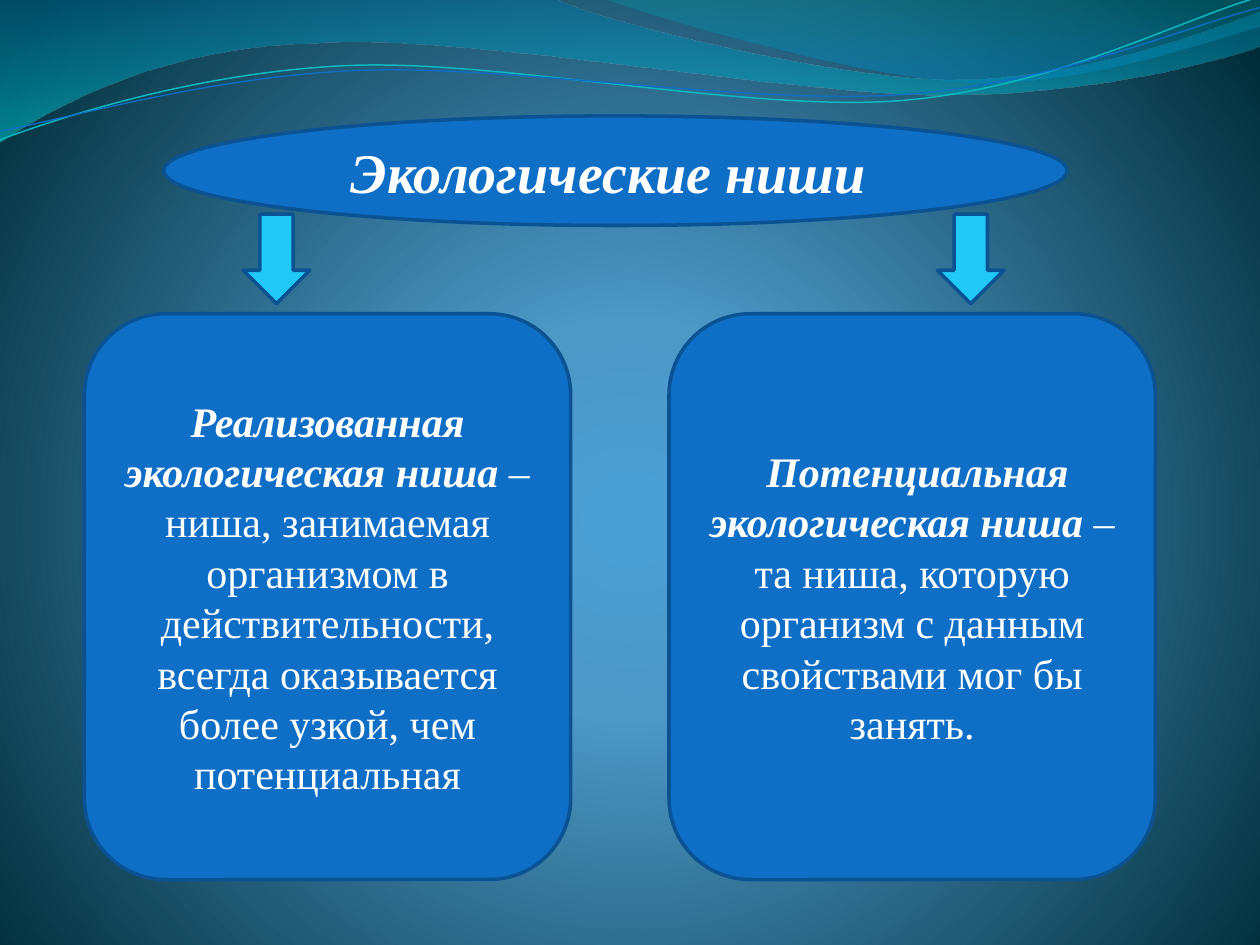
from math import cos, radians, sin

from lxml.etree import SubElement
from pptx import Presentation
from pptx.dml.color import RGBColor
from pptx.enum.shapes import MSO_SHAPE
from pptx.enum.text import MSO_ANCHOR, PP_ALIGN
from pptx.oxml.ns import qn
from pptx.util import Inches, Pt

BLUE = RGBColor(0x0F, 0x6F, 0xC6)
DARK_BLUE = RGBColor(0x0B, 0x52, 0x92)
CYAN = RGBColor(0x20, 0xC9, 0xF8)
TEAL = RGBColor(0x0A, 0xB8, 0xBF)
WHITE = RGBColor(0xFF, 0xFF, 0xFF)

WIDTH, HEIGHT = 10, 7.5
FONT = "Times New Roman"

TITLE = [("Экологические ниши ", True, True)]
NICHES = [
    [("Реализованная экологическая ниша ", True, True),
     ("– ниша, занимаемая организмом в действительности, всегда оказывается "
      "более узкой, чем потенциальная", False, False)],
    [(" ", True, False),
     ("Потенциальная экологическая ниша ", True, True),
     ("– та ниша, которую организм с данным свойствами мог бы занять.", False, False)],
]

BACKGROUND_STOPS = [(0, "4AA0D6", 100), (25, "4C98C7", 100), (100, "002C38", 100)]
BACKGROUND_FOCUS = {"l": 10, "t": 110, "r": 10, "b": 100}

WAVES = [
    ([(0, 0), (4.4, -0.01),
      (4.76, 0.17, 6.64, 0.63, 7.58, 0.63), (8.53, 0.63, 9.58, 0.26, 10, 0.09),
      (10.01, 0.36),
      (9.83, 0.44, 8.7, 0.76, 7.46, 0.75), (6.22, 0.75, 3.82, 0.28, 2.57, 0.34),
      (1.29, 0.36, 0.46, 0.83, -0.01, 1.13), (0, 0)],
     [(0, "0074A1", 45), (100, "00C6CF", 55)]),
    ([(4.79, -0.01),
      (5.09, 0.11, 6.82, 0.62, 7.69, 0.65), (8.56, 0.69, 9.61, 0.32, 10, 0.21),
      (10, 0), (4.79, -0.01)],
     [(0, "00A1A9", 30), (80, "008BBF", 45)]),
]
STRAND_TILT = 2.7
STRANDS = [
    ([(0, 1.11), (0.48, 0.93, 1.58, 0.57, 2.77, 0.52),
      (3.95, 0.47, 5.93, 0.89, 7.13, 0.8), (8.33, 0.71, 9.38, 0.15, 9.98, -0.02)],
     (4.99, 0.57), TEAL, 0.85),
    ([(0, 1.04), (0.47, 0.96, 1.64, 0.61, 2.83, 0.56),
      (4.03, 0.51, 5.97, 0.84, 7.17, 0.75), (8.36, 0.67, 9.41, 0.21, 10, 0.06)],
     (5, 0.59), BLUE, 0.75),
]

CARD_LEFT, CARD_TOP, CARD_WIDTH, CARD_HEIGHT, CARD_PITCH = 0.67, 2.49, 3.86, 4.49, 4.64
ARROW_LEFT, ARROW_TOP, ARROW_WIDTH, ARROW_HEIGHT, ARROW_PITCH = 1.93, 1.7, 0.53, 0.71, 5.51


def set_gradient(fill, element, stops, focus=None):
    fill.gradient()
    gradient = element.find(".//" + qn("a:gradFill"))
    for child in list(gradient):
        gradient.remove(child)
    stop_list = SubElement(gradient, qn("a:gsLst"))
    for position, color, opacity in stops:
        stop = SubElement(stop_list, qn("a:gs"), pos=str(position * 1000))
        color_element = SubElement(stop, qn("a:srgbClr"), val=color)
        if opacity < 100:
            SubElement(color_element, qn("a:alpha"), val=str(opacity * 1000))
    if focus:
        circle = SubElement(gradient, qn("a:path"), path="circle")
        SubElement(circle, qn("a:fillToRect"),
                   {side: str(share * 1000) for side, share in focus.items()})
    else:
        SubElement(gradient, qn("a:lin"), ang="5400000", scaled="1")


def point_pairs(segment):
    return list(zip(segment[::2], segment[1::2]))


def turn(segment, center, degrees):
    cosine, sine = cos(radians(degrees)), sin(radians(degrees))
    turned = []
    for x, y in point_pairs(segment):
        dx, dy = x - center[0], y - center[1]
        turned += [center[0] + dx * cosine - dy * sine, center[1] + dx * sine + dy * cosine]
    return turned


def add_outline(slide, segments, close):
    anchors = [(Inches(segment[-2]), Inches(segment[-1])) for segment in segments]
    builder = slide.shapes.build_freeform(*anchors[0], scale=1.0)
    builder.add_line_segments(anchors[1:], close=close)
    shape = builder.convert_to_shape()
    shape.shadow.inherit = False
    left, top = (min(values) for values in zip(*anchors))
    lines = list(shape.element.iter(qn("a:lnTo")))
    for line, segment in zip(lines, segments[1:]):
        if len(segment) == 2:
            continue
        line.tag = qn("a:cubicBezTo")
        for point in list(line):
            line.remove(point)
        for x, y in point_pairs(segment):
            SubElement(line, qn("a:pt"), x=str(Inches(x) - left), y=str(Inches(y) - top))
    return shape


def add_block(slide, kind, box, color, runs=(), size=24):
    shape = slide.shapes.add_shape(kind, *(Inches(length) for length in box))
    shape.shadow.inherit = False
    shape.fill.solid()
    shape.fill.fore_color.rgb = color
    shape.line.color.rgb = DARK_BLUE
    shape.line.width = Pt(2)
    if not runs:
        return
    frame = shape.text_frame
    frame.word_wrap = True
    frame.vertical_anchor = MSO_ANCHOR.MIDDLE
    paragraph = frame.paragraphs[0]
    paragraph.alignment = PP_ALIGN.CENTER
    paragraph.font.name = FONT
    paragraph.font.size = Pt(size)
    paragraph.font.color.rgb = WHITE
    for text, bold, italic in runs:
        run = paragraph.add_run()
        run.text = text
        run.font.bold = bold
        run.font.italic = italic


def main():
    presentation = Presentation()
    presentation.slide_width = Inches(WIDTH)
    presentation.slide_height = Inches(HEIGHT)
    slide = presentation.slides.add_slide(presentation.slide_layouts[6])
    set_gradient(slide.background.fill, slide.element, BACKGROUND_STOPS, BACKGROUND_FOCUS)

    for segments, stops in WAVES:
        wave = add_outline(slide, segments, True)
        set_gradient(wave.fill, wave.element, stops)
        wave.line.fill.background()
    for segments, center, color, width in STRANDS:
        level = [turn(segment, center, STRAND_TILT) for segment in segments]
        strand = add_outline(slide, level, False)
        strand.rotation = 360 - STRAND_TILT
        strand.fill.background()
        strand.line.color.rgb = color
        strand.line.width = Pt(width)

    for column, runs in enumerate(NICHES):
        box = (CARD_LEFT + column * CARD_PITCH, CARD_TOP, CARD_WIDTH, CARD_HEIGHT)
        add_block(slide, MSO_SHAPE.ROUNDED_RECTANGLE, box, BLUE, runs)
    add_block(slide, MSO_SHAPE.OVAL, (1.3, 0.92, 7.17, 0.87), BLUE, TITLE, 32)
    for column in range(len(NICHES)):
        box = (ARROW_LEFT + column * ARROW_PITCH, ARROW_TOP, ARROW_WIDTH, ARROW_HEIGHT)
        add_block(slide, MSO_SHAPE.DOWN_ARROW, box, CYAN)

    presentation.save("out.pptx")


if __name__ == "__main__":
    main()
